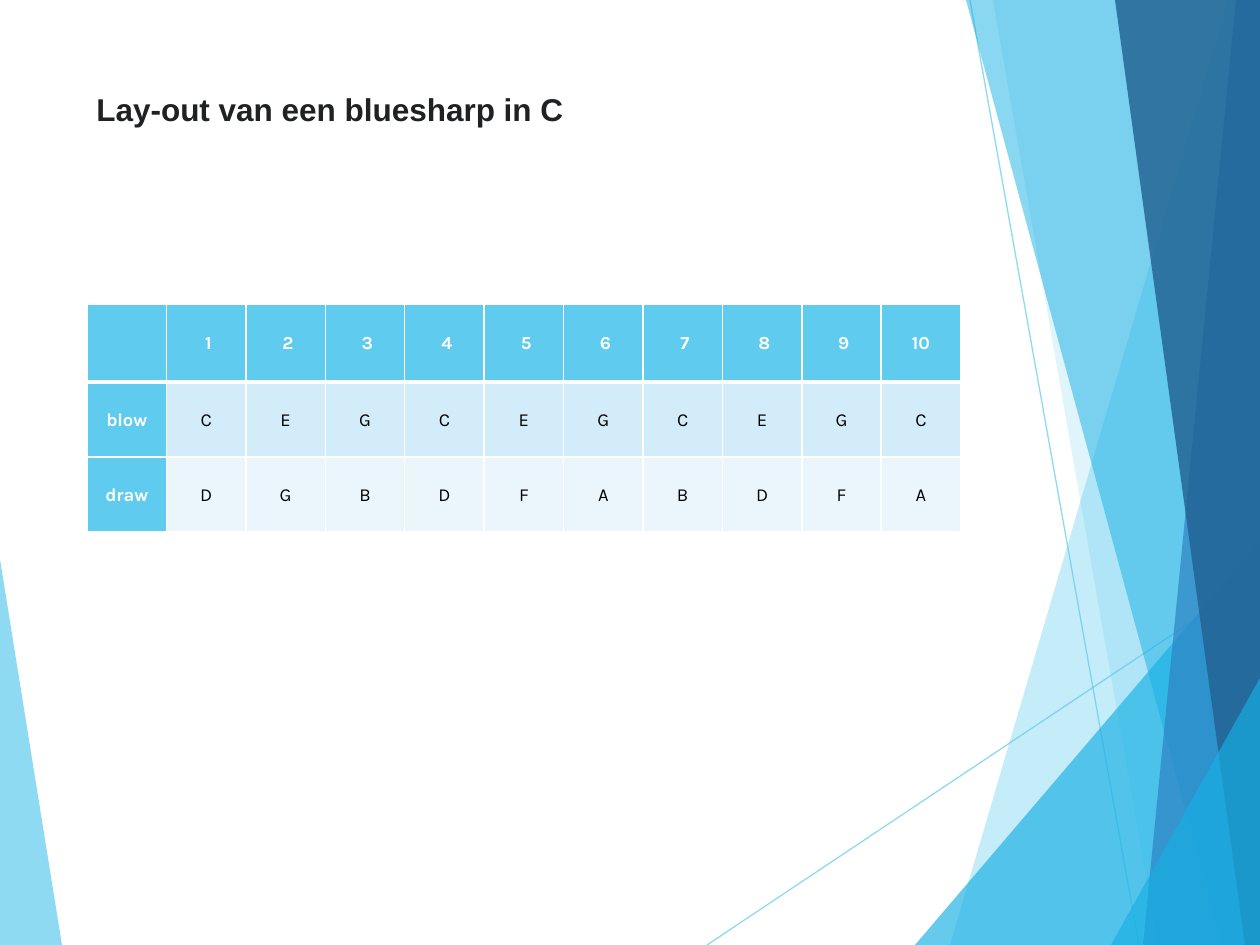
from dataclasses import dataclass

from lxml.etree import SubElement
from pptx import Presentation
from pptx.dml.color import RGBColor
from pptx.enum.shapes import MSO_CONNECTOR
from pptx.enum.text import MSO_ANCHOR, PP_ALIGN
from pptx.oxml.ns import qn
from pptx.util import Emu, Pt

PX_PER_INCH = 126
WIDTH, HEIGHT = 1260, 945


@dataclass(frozen=True)
class Theme:
    sky: str = "5FCBEF"
    cyan: str = "17B0E4"
    blue: str = "2E83C3"
    navy: str = "226292"
    blow_band: str = "D2ECF9"
    draw_band: str = "EAF6FC"
    white: str = "FFFFFF"
    black: str = "000000"
    title_ink: str = "202122"
    title_font: str = "Arial"
    table_font: str = "Karla"
    title_size: float = 18
    table_size: float = 10.5
    hairline: float = 0.75
    border: float = 1
    header_rule: float = 3


THEME = Theme()

# Outline, colour and opacity in percent, from back to front
LEFT_FACET = ([(0, 559), (62, HEIGHT), (0, HEIGHT)], THEME.sky, 70)
RIGHT_FACETS = [
    ([(1228, 0), (950, HEIGHT), (WIDTH, HEIGHT), (WIDTH, 0)], THEME.sky, 36),
    ([(993, 0), (1158, HEIGHT), (WIDTH, HEIGHT), (WIDTH, 0)], THEME.sky, 20),
    ([(915, HEIGHT), (WIDTH, 541), (WIDTH, HEIGHT)], THEME.cyan, 66),
    ([(966, 0), (1222, HEIGHT), (WIDTH, HEIGHT), (WIDTH, 0)], THEME.cyan, 50),
    ([(1236, 0), (1143, HEIGHT), (WIDTH, HEIGHT), (WIDTH, 0)], THEME.blue, 70),
    ([(1115, 0), (1245, HEIGHT), (WIDTH, HEIGHT), (WIDTH, 0)], THEME.navy, 82),
    ([(1111, HEIGHT), (WIDTH, 678), (WIDTH, HEIGHT)], THEME.cyan, 66),
]
RAYS = [((707, HEIGHT), (WIDTH, 576)), ((970, 0), (1139, HEIGHT))]

HOLES = [f" {hole}" for hole in range(1, 10)] + ["10"]
HARP_ROWS = [["", *HOLES], ["blow", *"CEGCEGCEGC"], ["draw", *"DGBDFABDFA"]]
ROW_HEIGHTS = [78, 75, 75]
BAND_FILLS = [THEME.sky, THEME.blow_band, THEME.draw_band]


def px(length):
    return Emu(round(length * 914400 / PX_PER_INCH))


def rgb(color):
    return RGBColor.from_string(color)


def paint(fill, color, opacity=100):
    fill.solid()
    fill.fore_color.rgb = rgb(color)
    if opacity < 100:
        srgb = fill._xPr.find(qn("a:solidFill"))[0]
        SubElement(srgb, qn("a:alpha"), val=str(opacity * 1000))


def style_font(font, name, size, color, bold):
    font.name, font.size, font.bold = name, Pt(size), bold
    font.color.rgb = rgb(color)


def add_facet(shapes, outline, color, opacity):
    start, *others = outline
    builder = shapes.build_freeform(*start, scale=px(1))
    builder.add_line_segments(others, close=True)
    facet = builder.convert_to_shape()
    facet.shadow.inherit = False
    paint(facet.fill, color, opacity)
    facet.line.fill.background()


def add_ray(shapes, start, end):
    ray = shapes.add_connector(MSO_CONNECTOR.STRAIGHT, *map(px, start + end))
    SubElement(ray._element.spPr, qn("a:effectLst"))
    ray.line.width = Pt(THEME.hairline)
    paint(ray.line.fill, THEME.sky, 70)


def add_title(shapes, wording):
    frame = shapes.add_textbox(px(84), px(84), px(874), px(181)).text_frame
    frame.word_wrap = True
    frame.vertical_anchor = MSO_ANCHOR.TOP
    title = frame.paragraphs[0]
    title.text = wording
    style_font(title.font, THEME.title_font, THEME.title_size, THEME.title_ink, True)


def add_border(cell, side, width):
    border = SubElement(cell._tc.get_or_add_tcPr(), qn(f"a:ln{side}"), w=str(Pt(width)))
    solid = SubElement(border, qn("a:solidFill"))
    SubElement(solid, qn("a:srgbClr"), val=THEME.white)


def fill_cell(cell, wording, row, is_heading):
    """Borders go in before the fill, as the cell's schema orders them."""
    top = THEME.header_rule if row == 1 else THEME.border
    bottom = THEME.header_rule if row == 0 else THEME.border
    for side, width in zip("LRTB", (THEME.border, THEME.border, top, bottom)):
        add_border(cell, side, width)
    paint(cell.fill, THEME.sky if is_heading else BAND_FILLS[row])
    cell.vertical_anchor = MSO_ANCHOR.MIDDLE
    cell.margin_left = cell.margin_right = px(9)
    cell.margin_top = cell.margin_bottom = px(4)
    note = cell.text_frame.paragraphs[0]
    note.text = wording
    note.alignment = PP_ALIGN.CENTER
    note.line_spacing = 1.07
    ink = THEME.white if is_heading else THEME.black
    style_font(note.font, THEME.table_font, THEME.table_size, ink, is_heading)


def add_harp_table(shapes):
    columns = len(HARP_ROWS[0])
    width, height = px(874), px(sum(ROW_HEIGHTS))
    table = shapes.add_table(
        len(HARP_ROWS), columns, px(87), px(304), width, height
    ).table
    table.first_col = True
    for column in table.columns:
        column.width = width // columns
    for row, (notes, row_height) in enumerate(zip(HARP_ROWS, ROW_HEIGHTS)):
        table.rows[row].height = px(row_height)
        for column, wording in enumerate(notes):
            fill_cell(table.cell(row, column), wording, row, row == 0 or column == 0)


def main():
    deck = Presentation()
    deck.slide_width, deck.slide_height = px(WIDTH), px(HEIGHT)
    shapes = deck.slides.add_slide(deck.slide_layouts[6]).shapes
    add_facet(shapes, *LEFT_FACET)
    for start, end in RAYS:
        add_ray(shapes, start, end)
    for facet in RIGHT_FACETS:
        add_facet(shapes, *facet)
    add_title(shapes, "Lay-out van een bluesharp in C")
    add_harp_table(shapes)
    deck.save("out.pptx")


if __name__ == "__main__":
    main()
